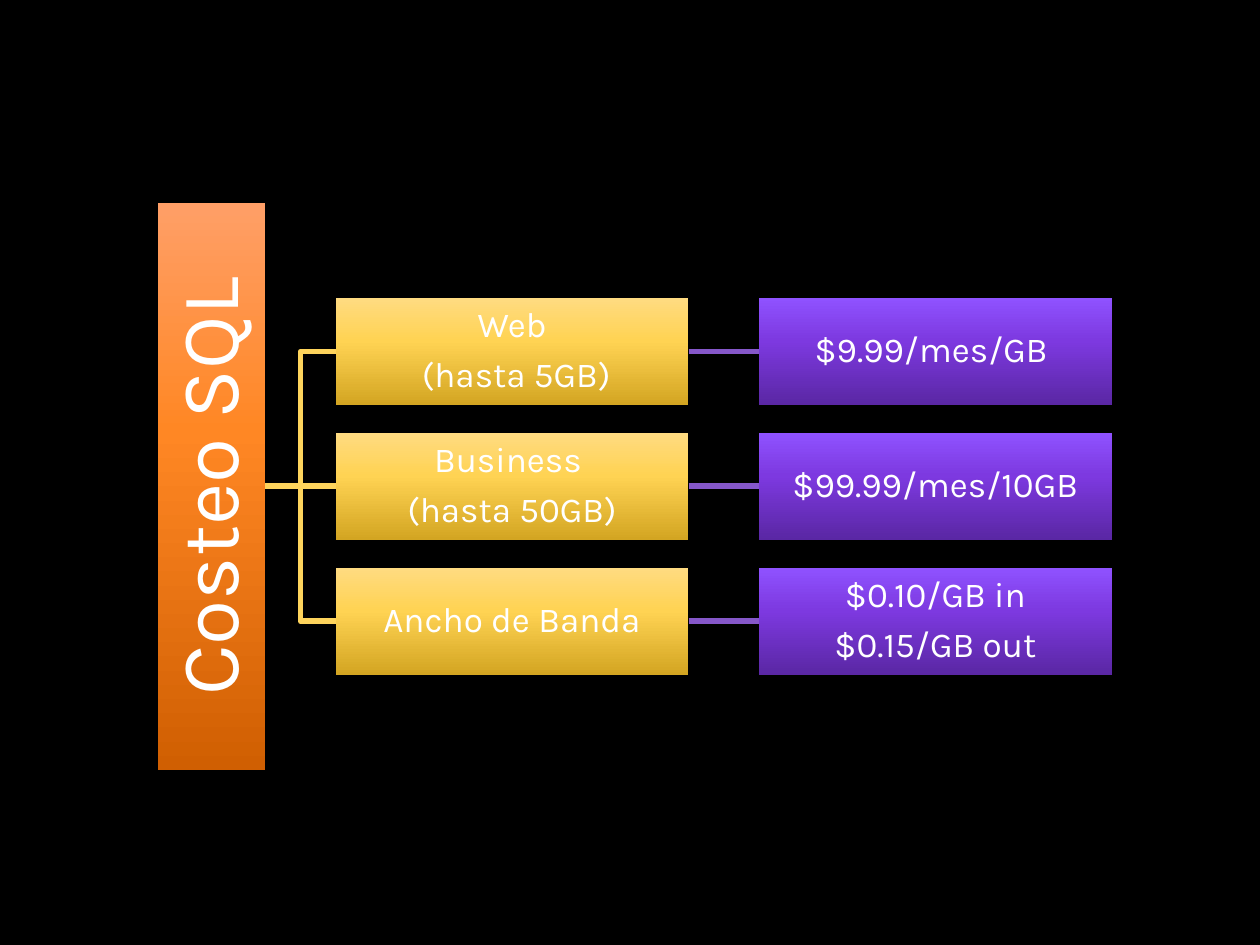
"""Build the SQL pricing slide as a horizontal hierarchy."""
from dataclasses import dataclass

from pptx import Presentation
from pptx.dml.color import RGBColor
from pptx.enum.shapes import MSO_CONNECTOR, MSO_SHAPE
from pptx.enum.text import MSO_ANCHOR, PP_ALIGN
from pptx.oxml import parse_xml
from pptx.oxml.ns import nsdecls
from pptx.util import Inches, Pt


@dataclass(frozen=True)
class Theme:
    font: str = "Karla"
    background: str = "000000"
    text: str = "FFFFFF"
    orange: tuple = ("D05F02", "FF8724", "FF9F67")
    yellow: tuple = ("D3A522", "FFD353", "FFDB81")
    purple: tuple = ("5A27A4", "7D39E0", "8F52FF")
    plan_line: str = "FED45C"
    price_line: str = "8557C9"
    line_width: float = 3.35
    root_size: int = 47
    box_size: int = 20


def add_box(cx, cy, w, h, lines, colors, size, inset, rotation=0):
    sp = slide.shapes.add_shape(
        MSO_SHAPE.RECTANGLE, Inches(cx - w / 2), Inches(cy - h / 2), Inches(w), Inches(h))
    sp.rotation = rotation
    stops = "".join(
        f'<a:gs pos="{pos}000"><a:srgbClr val="{color}"/></a:gs>'
        for pos, color in zip((0, 60, 100), colors))
    sp._element.spPr.insert(2, parse_xml(
        f'<a:gradFill {nsdecls("a")} rotWithShape="0"><a:gsLst>{stops}</a:gsLst>'
        '<a:lin ang="16200000" scaled="0"/></a:gradFill>'))
    sp.line.fill.background()
    sp.shadow.inherit = False
    tf = sp.text_frame
    frame_format = {"word_wrap": True, "vertical_anchor": MSO_ANCHOR.MIDDLE}
    frame_format |= {f"margin_{side}": Inches(inset) for side in ("left", "top", "right", "bottom")}
    for name, value in frame_format.items():
        setattr(tf, name, value)
    for i, line in enumerate(lines):
        p = tf.paragraphs[0] if i == 0 else tf.add_paragraph()
        for name, value in {"alignment": PP_ALIGN.CENTER, "line_spacing": 0.9,
                            "space_after": Pt(round(size * 0.35))}.items():
            setattr(p, name, value)
        r = p.add_run()
        r.text = line
        for name, value in {"name": theme.font, "size": Pt(size)}.items():
            setattr(r.font, name, value)
        r.font.color.rgb = RGBColor.from_string(theme.text)
    return sp


def add_link(kind, x1, y1, x2, y2, color):
    cn = slide.shapes.add_connector(kind, Inches(x1), Inches(y1), Inches(x2), Inches(y2))
    cn.line.color.rgb = RGBColor.from_string(color)
    cn.line.width = Pt(theme.line_width)
    cn._element.spPr.append(parse_xml(f'<a:effectLst {nsdecls("a")}/>'))
    return cn


theme = Theme()
prs = Presentation()
prs.slide_width, prs.slide_height = Inches(10), Inches(7.5)
slide = prs.slides.add_slide(prs.slide_layouts[6])
slide.background.fill.solid()
slide.background.fill.fore_color.rgb = RGBColor.from_string(theme.background)

rows = [
    (["Web", " (hasta 5GB)"], ["$9.99/mes/GB "]),
    (["Business ", "(hasta 50GB)"], ["$99.99/mes/10GB"]),
    (["Ancho de Banda"], ["$0.10/GB in", "$0.15/GB out"]),
]
box_w, box_h, root_length, gap, pitch = 2.8, 0.85, 4.5, 0.56, 1.07
root_x, mid_y = 1.68, 3.86
root_right = root_x + box_h / 2
plan_x = root_right + gap + box_w / 2
price_x = plan_x + box_w + gap

root = add_box(root_x, mid_y, root_length, box_h, ["Costeo SQL"],
               theme.orange, theme.root_size, 0.03, 270)
for i, (plan_lines, price_lines) in enumerate(rows):
    y = mid_y + (i - 1) * pitch
    plan = add_box(plan_x, y, box_w, box_h, plan_lines, theme.yellow, theme.box_size, 0.01)
    price = add_box(price_x, y, box_w, box_h, price_lines, theme.purple, theme.box_size, 0.01)
    plan_left, plan_right = plan_x - box_w / 2, plan_x + box_w / 2
    straight = y == mid_y
    kind = MSO_CONNECTOR.STRAIGHT if straight else MSO_CONNECTOR.ELBOW
    branch = add_link(kind, root_right, mid_y, plan_left, y, theme.plan_line)
    if straight:
        branch.begin_connect(root, 2)
        branch.begin_x, branch.begin_y = Inches(root_right), Inches(mid_y)
        branch.end_connect(plan, 1)
    link = add_link(MSO_CONNECTOR.STRAIGHT, plan_right, y, plan_right + gap, y, theme.price_line)
    link.begin_connect(plan, 3)
    link.end_connect(price, 1)

prs.save("out.pptx")
